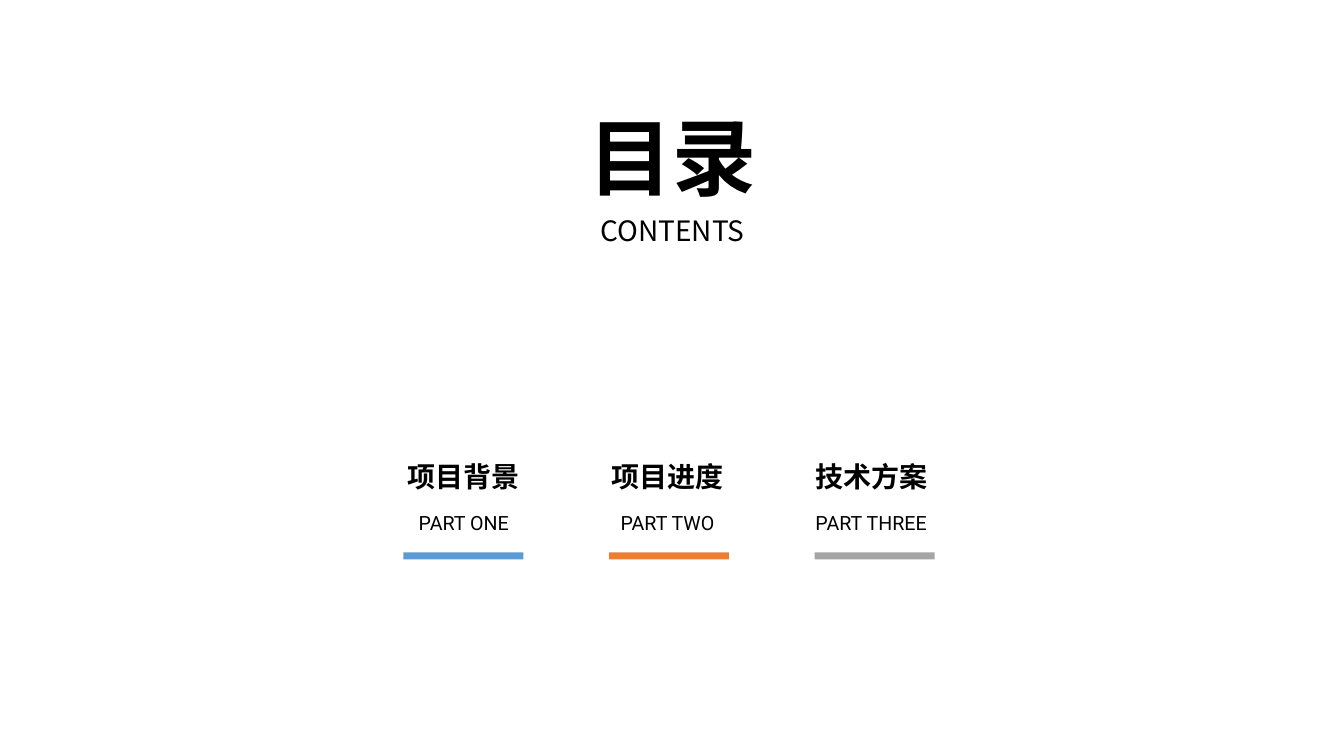
from dataclasses import dataclass

import lxml.etree
import pptx
import pptx.dml.color
import pptx.enum.shapes
import pptx.enum.text
import pptx.oxml.ns
import pptx.util

PX = pptx.util.Inches(1) // 100
CJK = "Noto Sans CJK SC"
LATIN = "Roboto"
COLUMN_LEFT, COLUMN_WIDTH = 359, 202
BAR_LEFT, BAR_PITCH = 400, 204


@dataclass
class Section:
    heading: str
    caption: str
    color: str


SECTIONS = [
    Section("项目背景", "PART ONE", "5B9BD5"),
    Section("项目进度", "PART TWO", "ED7D31"),
    Section("技术方案", "PART THREE", "A5A5A5"),
]


def rgb(value: str) -> pptx.dml.color.RGBColor:
    return pptx.dml.color.RGBColor.from_string(value)


def place(sp, left: int, top: int, width: int, height: int) -> None:
    sp.left, sp.top, sp.width, sp.height = (
        n * PX for n in (left, top, width, height)
    )


def write(sp, text: str, size: int, font: str, bold: bool = False,
          anchor=pptx.enum.text.MSO_ANCHOR.TOP) -> None:
    tf = sp.text_frame
    tf.word_wrap = True
    tf.auto_size = pptx.enum.text.MSO_AUTO_SIZE.NONE
    tf.vertical_anchor = anchor
    p = tf.paragraphs[0]
    p.text = text
    p.alignment = pptx.enum.text.PP_ALIGN.CENTER
    p.line_spacing = 0.9
    p.space_before = pptx.util.Pt(0)
    p.font.size = pptx.util.Pt(size)
    p.font.bold = bold
    p.font.color.rgb = rgb("000000")
    p.font.name = font
    qn = pptx.oxml.ns.qn
    props = p._p.pPr.find(qn("a:defRPr"))
    lxml.etree.SubElement(props, qn("a:ea")).set("typeface", CJK)


def add_label(slide, left: int, top: int, text: str, size: int,
              bold: bool = False) -> None:
    sp = slide.shapes.add_textbox(0, 0, 0, 0)
    place(sp, left, top, COLUMN_WIDTH, 50)
    write(sp, text, size, LATIN, bold)


def add_bar(slide, left: int, color: str) -> None:
    sp = slide.shapes.add_shape(
        pptx.enum.shapes.MSO_SHAPE.RECTANGLE, 0, 0, 0, 0)
    place(sp, left, 548, 119, 7)
    sp.shadow.inherit = False
    sp.fill.solid()
    sp.fill.fore_color.rgb = rgb(color)
    sp.line.fill.background()


def main() -> None:
    prs = pptx.Presentation()
    prs.slide_width, prs.slide_height = 1333 * PX, 750 * PX
    slide = prs.slides.add_slide(prs.slide_layouts[0])
    middle = pptx.enum.text.MSO_ANCHOR.MIDDLE

    title = slide.shapes.title
    place(title, 416, 112, 502, 97)
    write(title, "目录", 60, CJK, True, middle)
    subtitle = slide.placeholders[1]
    place(subtitle, 416, 209, 502, 44)
    write(subtitle, "CONTENTS", 20, CJK, False, middle)

    for i, section in enumerate(SECTIONS):
        left = COLUMN_LEFT + i * COLUMN_WIDTH
        add_label(slide, left, 455, section.heading, 20, True)
        add_label(slide, left, 505, section.caption, 14)
        add_bar(slide, BAR_LEFT + i * BAR_PITCH, section.color)

    prs.save("out.pptx")


if __name__ == "__main__":
    main()
